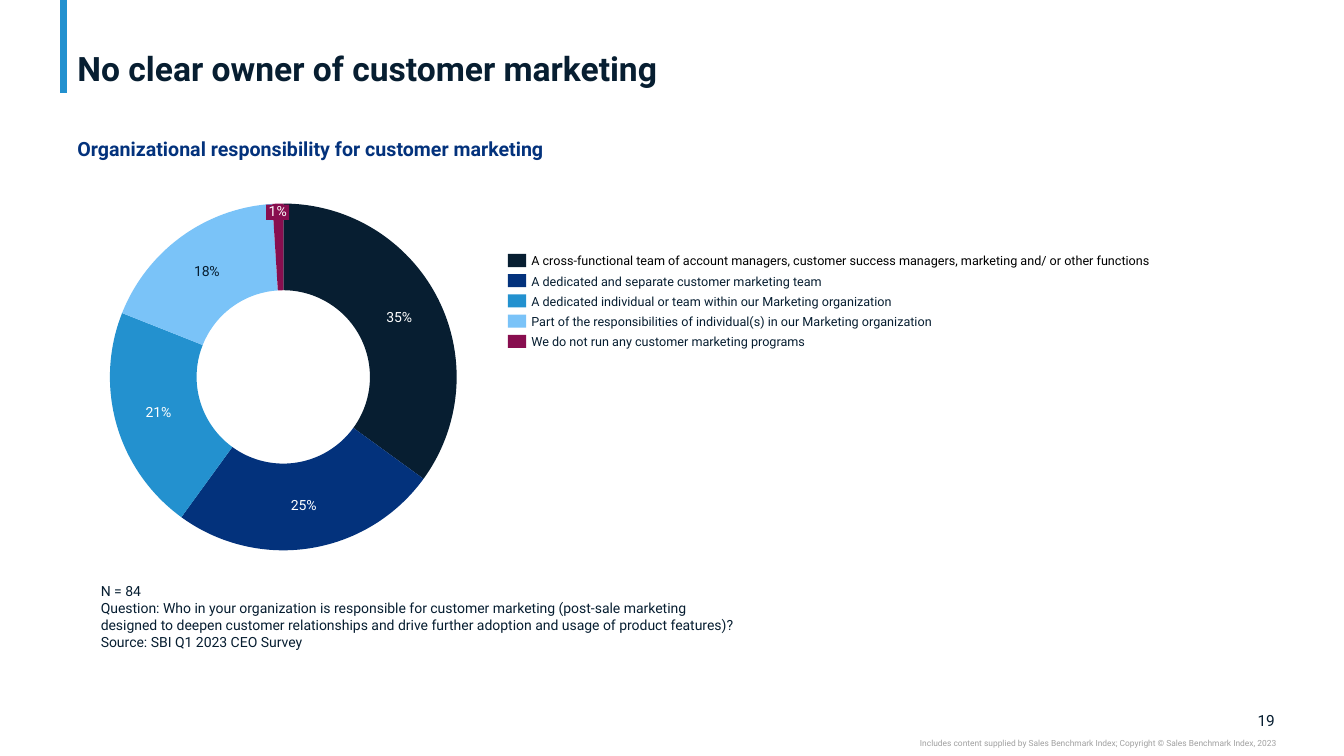
import pptx
import pptx.chart.data
import pptx.dml.color
import pptx.enum.chart
import pptx.enum.shapes
import pptx.enum.text
import pptx.oxml
import pptx.util

Cm, Pt = pptx.util.Cm, pptx.util.Pt
ALIGN, ANCHOR = pptx.enum.text.PP_ALIGN, pptx.enum.text.MSO_ANCHOR
RECTANGLE = pptx.enum.shapes.MSO_SHAPE.RECTANGLE

# Content
FONT = "Roboto"
COLORS = {"ink": "071E31", "navy": "03327C", "blue": "2391CF", "sky": "7AC3F8",
          "plum": "880E4F", "black": "000000", "white": "FFFFFF", "gray": "A0A0A0"}
TITLE = "No clear owner of customer marketing"
SUBTITLE = "Organizational responsibility for customer marketing"
# answer, percent, slice color, percent color, legend text color
ANSWERS = [
    ("A cross-functional team of account managers, customer success managers, "
     "marketing and/ or other functions", 35, "ink", "white", "black"),
    ("A dedicated and separate customer marketing team", 25, "navy", "white", "ink"),
    ("A dedicated individual or team within our Marketing organization",
     21, "blue", "white", "ink"),
    ("Part of the responsibilities of individual(s) in our Marketing organization",
     18, "sky", "ink", "ink"),
    ("We do not run any customer marketing programs", 1, "plum", "white", "ink"),
]
SURVEY_NOTES = [
    "N = 84",
    "Question: Who in your organization is responsible for customer marketing "
    "(post-sale marketing designed to deepen customer relationships and drive "
    "further adoption and usage of product features)?",
    "Source: SBI Q1 2023 CEO Survey",
]
PAGE_NUMBER = "19"
COPYRIGHT = ("Includes content supplied by Sales Benchmark Index; "
             "Copyright © Sales Benchmark Index, 2023")

# Layout in centimetres: left, top, width, height
TITLE_BOX = (1.7, 0.1, 30.45, 2.13)
SUBTITLE_BOX = (1.7, 3.33, 13.82, 0.86)
DONUT_BOX = (2.54, 4.9, 9.2, 9.2)
SMALL_LABEL_BOX = (6.71, 5.16, 0.58, 0.38)
NOTES_BOX = (2.29, 14.55, 16.74, 2.39)
PAGE_BOX = (31.29, 17.91, 0.84, 0.48)
COPYRIGHT_BOX = (19.05, 18.59, 13.11, 0.25)
LEGEND_TOP, LEGEND_STEP = 6.4, 0.51
SWATCH_LEFT, SWATCH_WIDTH, SWATCH_HEIGHT = 12.8, 0.46, 0.33
ANSWER_LEFT, ANSWER_WIDTH, ANSWER_HEIGHT = 13.39, 15.77, 0.36


def rgb(color):
    return pptx.dml.color.RGBColor.from_string(COLORS[color])


def style(font, size, color, bold=False):
    font.name, font.size, font.bold = FONT, Pt(size), bold
    font.color.rgb = rgb(color)


def write(frame, lines, size, color, bold=False, align=ALIGN.LEFT,
          anchor=ANCHOR.TOP, insets=(0, 0), wrap=True, spacing=None):
    frame.word_wrap = wrap
    frame.vertical_anchor = anchor
    frame.auto_size = pptx.enum.text.MSO_AUTO_SIZE.NONE
    frame.margin_left = frame.margin_right = Cm(insets[0])
    frame.margin_top = frame.margin_bottom = Cm(insets[1])
    for index, line in enumerate(lines):
        paragraph = frame.add_paragraph() if index else frame.paragraphs[0]
        paragraph.alignment = align
        if spacing:
            paragraph.line_spacing = spacing
        run = paragraph.add_run()
        run.text = line
        style(run.font, size, color, bold)


def add_text(box, lines, size, color, **options):
    text = slide.shapes.add_textbox(*map(Cm, box))
    write(text.text_frame, lines, size, color, **options)


def add_block(box, color):
    block = slide.shapes.add_shape(RECTANGLE, *map(Cm, box))
    block.shadow.inherit = False
    block.fill.solid()
    block.fill.fore_color.rgb = rgb(color)
    block.line.fill.background()
    return block


deck = pptx.Presentation()
deck.slide_width, deck.slide_height = Cm(33.87), Cm(19.05)
slide = deck.slides.add_slide(deck.slide_layouts[5])

# Accent line and headings
accent = slide.shapes.add_connector(
    pptx.enum.shapes.MSO_CONNECTOR.STRAIGHT, Cm(1.6), Cm(0), Cm(1.6), Cm(2.34))
accent.line.color.rgb = rgb("blue")
accent.line.width = Pt(5)
accent._element.spPr.append(pptx.oxml.parse_xml(
    '<a:effectLst xmlns:a="http://schemas.openxmlformats.org/drawingml/2006/main"/>'))

title = slide.shapes.title
title.left, title.top, title.width, title.height = map(Cm, TITLE_BOX)
write(title.text_frame, [TITLE], 24, "ink", bold=True, anchor=ANCHOR.BOTTOM,
      insets=(0.25, 0), spacing=0.9)
add_text(SUBTITLE_BOX, [SUBTITLE], 14, "navy", bold=True, insets=(0.25, 0.13))

# Donut of answers
shares = pptx.chart.data.CategoryChartData(number_format='0"%"')
shares.categories = [str(number + 1) for number in range(len(ANSWERS))]
shares.add_series("Series 1", [answer[1] for answer in ANSWERS])
donut = slide.shapes.add_chart(
    pptx.enum.chart.XL_CHART_TYPE.DOUGHNUT, *map(Cm, DONUT_BOX), shares).chart
donut.has_legend = donut.has_title = False
style(donut.font, 10, "ink")
plot = donut.plots[0]
plot.vary_by_categories = False
plot._element.find("{*}holeSize").set("val", "50")
plot_area = plot._element.getparent()
for layout in plot_area.findall("{*}layout"):
    plot_area.remove(layout)
plot_area.insert(0, pptx.oxml.parse_xml(
    '<c:layout xmlns:c="http://schemas.openxmlformats.org/drawingml/2006/chart">'
    '<c:manualLayout><c:layoutTarget val="inner"/>'
    '<c:xMode val="edge"/><c:yMode val="edge"/><c:x val="0.025"/><c:y val="0.025"/>'
    '<c:w val="0.95"/><c:h val="0.95"/></c:manualLayout></c:layout>'))

labels = plot.series[0].data_labels
labels.show_value = True
labels.number_format, labels.number_format_is_linked = '0"%"', False
style(labels.font, 10, "ink")
for index, (_, percent, color, percent_color, _) in enumerate(ANSWERS):
    point = plot.series[0].points[index]
    point.format.fill.solid()
    point.format.fill.fore_color.rgb = rgb(color)
    point.format.line.fill.background()
    style(point.data_label.font, 10, percent_color)
    # The thinnest slice carries its own block label below
    label = point.data_label._dLbl
    for flag in ("showLegendKey", "showVal", "showCatName", "showSerName", "showPercent"):
        shown = flag == "showVal" and percent > 1
        label.find("{*}" + flag).set("val", str(int(shown)))

small_label = add_block(SMALL_LABEL_BOX, "plum")
write(small_label.text_frame, [f"{ANSWERS[-1][1]}%"], 10, "white", align=ALIGN.CENTER,
      anchor=ANCHOR.MIDDLE, insets=(0.05, 0), wrap=False, spacing=0.9)

# Legend
for row, (answer, _, color, _, text_color) in enumerate(ANSWERS):
    top = LEGEND_TOP + row * LEGEND_STEP
    add_block((SWATCH_LEFT, top, SWATCH_WIDTH, SWATCH_HEIGHT), color)
    add_text((ANSWER_LEFT, top + 0.02, ANSWER_WIDTH, ANSWER_HEIGHT), [answer], 9,
             text_color, anchor=ANCHOR.MIDDLE, spacing=0.9)

# Survey notes and footer
add_text(NOTES_BOX, SURVEY_NOTES, 10, "ink", insets=(0.25, 0.13))
add_text(PAGE_BOX, [PAGE_NUMBER], 11, "ink", align=ALIGN.RIGHT, anchor=ANCHOR.MIDDLE)
add_text(COPYRIGHT_BOX, [COPYRIGHT], 6, "gray", align=ALIGN.RIGHT)

deck.save("out.pptx")
